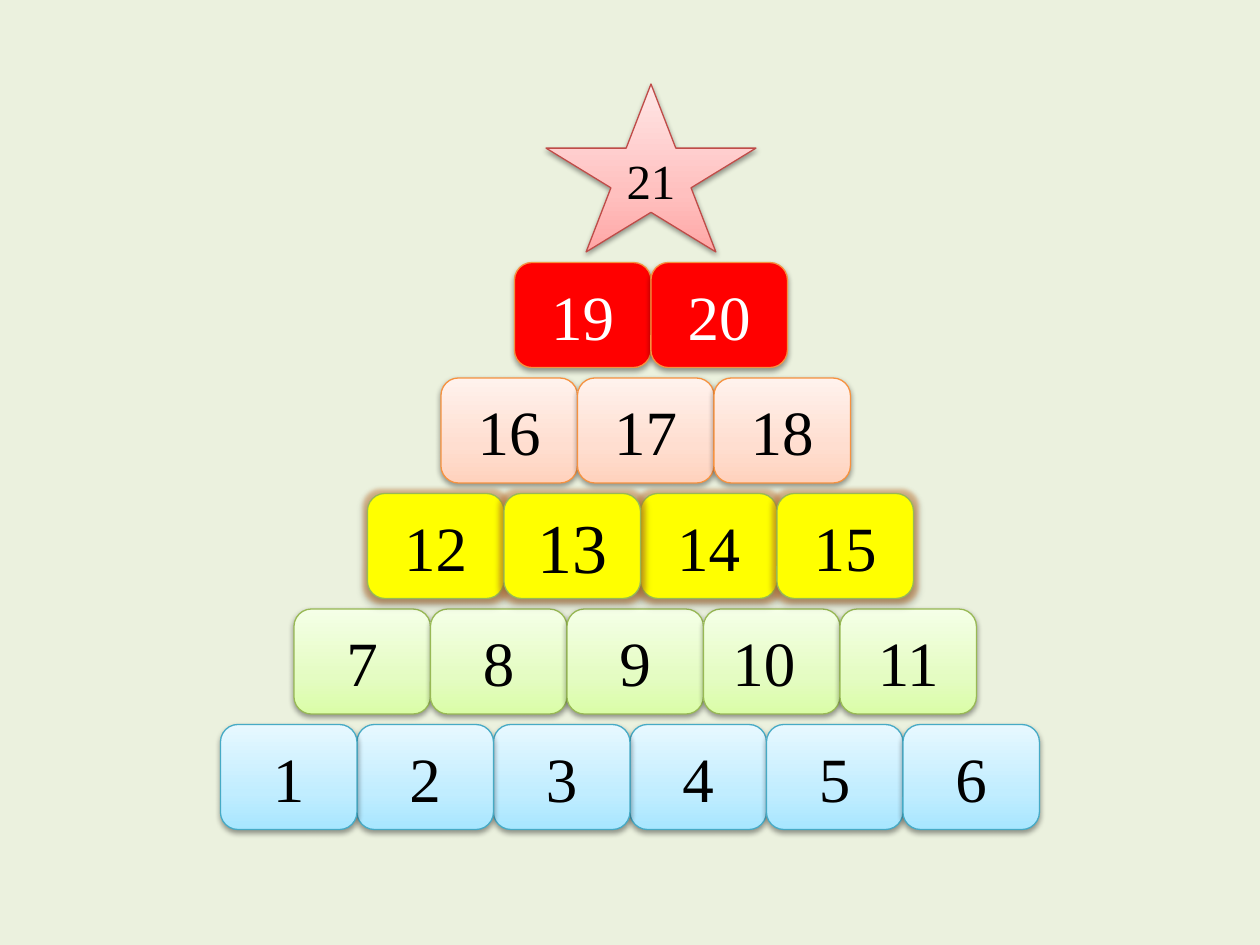
"""Build a number pyramid topped with a star."""
from copy import deepcopy
from dataclasses import dataclass

from lxml import etree
from pptx import Presentation
from pptx.dml.color import RGBColor
from pptx.enum.shapes import MSO_SHAPE
from pptx.enum.text import MSO_ANCHOR, PP_ALIGN
from pptx.oxml.ns import qn
from pptx.util import Inches, Pt

BOX, STAR = MSO_SHAPE.ROUNDED_RECTANGLE, MSO_SHAPE.STAR_5_POINT
MIDDLE, CENTER = MSO_ANCHOR.MIDDLE, PP_ALIGN.CENTER

PAPER = RGBColor(0xEB, 0xF1, 0xDE)
BLACK = RGBColor(0x00, 0x00, 0x00)
WHITE = RGBColor(0xFF, 0xFF, 0xFF)
RED = RGBColor(0xFF, 0x00, 0x00)
YELLOW = RGBColor(0xFF, 0xFF, 0x00)
GLOW = RGBColor(0xD0, 0x7A, 0x30)
TEAL = RGBColor(0x46, 0xAA, 0xC5)
OLIVE = RGBColor(0x98, 0xB9, 0x55)
ORANGE = RGBColor(0xF6, 0x92, 0x40)
BRICK = RGBColor(0xBF, 0x4C, 0x48)
BLUES = (RGBColor(0xA7, 0xE6, 0xFF), RGBColor(0xC1, 0xED, 0xFF), RGBColor(0xE7, 0xF8, 0xFF))
GREENS = (RGBColor(0xDA, 0xFD, 0xA7), RGBColor(0xE4, 0xFC, 0xC2), RGBColor(0xF5, 0xFF, 0xE7))
PEACHES = (RGBColor(0xFF, 0xD2, 0xBD), RGBColor(0xFF, 0xDE, 0xD0), RGBColor(0xFF, 0xF2, 0xED))
PINKS = (RGBColor(0xFF, 0xA6, 0xA5), RGBColor(0xFF, 0xC0, 0xBF), RGBColor(0xFF, 0xE7, 0xE7))

FONT = "Times New Roman"
STOPS = (0, 0.35, 1)
UNIT = Inches(1) // 12
WIDE, HIGH = 13, 10
LEFT, BASE = 21, 69
INDENT, RISE = 7, 11


@dataclass(frozen=True)
class Style:
    """Look of a tile; one colour is solid, three are a gradient."""
    fill: tuple[RGBColor, ...]
    line: RGBColor
    ink: RGBColor = BLACK
    glow: bool = False


@dataclass(frozen=True)
class Row:
    """Tiles of one row, from back to front."""
    labels: tuple[str, ...]
    style: Style


ROWS = (
    Row(("4", "3", "2", "1", "5", "6"), Style(BLUES, TEAL)),
    Row(("7", "8", "9", "10 ", "11"), Style(GREENS, OLIVE)),
    Row(("12", "14", "13", "15"), Style((YELLOW,), OLIVE, glow=True)),
    Row(("16", "17", "18"), Style(PEACHES, ORANGE)),
    Row(("19", "20"), Style((RED,), ORANGE, WHITE)),
)
SIZES = {"13": 40, "21": 28}


def paint(shape, hues: tuple[RGBColor, ...]) -> None:
    """Fill a shape with one colour or an upward gradient."""
    fill = shape.fill
    if len(hues) == 1:
        fill.solid()
        fill.fore_color.rgb = hues[0]
        return
    fill.gradient()
    fill.gradient_angle = 90
    stops = next(shape.element.spPr.iter(qn("a:gsLst")))
    stops.append(deepcopy(stops[-1]))
    for stop, place, hue in zip(fill.gradient_stops, STOPS, hues):
        stop.position = place
        stop.color.rgb = hue


def effect(group, tag: str, hue: RGBColor, alpha: int, **attrs: str) -> None:
    """Add a half-clear effect to an effect list."""
    item = etree.SubElement(group, qn(tag), attrs)
    tint = etree.SubElement(item, qn("a:srgbClr"), val=str(hue))
    etree.SubElement(tint, qn("a:alpha"), val=str(alpha * 1000))


def draw(slide, kind, text: str, area: tuple[int, ...], style: Style) -> None:
    """Draw one labelled tile on the grid."""
    shape = slide.shapes.add_shape(kind, *(UNIT * side for side in area))
    paint(shape, style.fill)
    shape.line.color.rgb = style.line
    shape.line.width = Pt(0.75)
    shape.shadow.inherit = False
    group = shape.element.spPr.find(qn("a:effectLst"))
    if style.glow:
        effect(group, "a:glow", GLOW, 40, rad="63500")
    effect(group, "a:outerShdw", BLACK, 38, blurRad="40000", dist="20000",
           dir="5400000", rotWithShape="0")
    frame = shape.text_frame
    frame.text = text
    frame.vertical_anchor = MIDDLE
    para = frame.paragraphs[0]
    para.alignment = CENTER
    font = para.runs[0].font
    font.name = FONT
    font.size = Pt(SIZES.get(text, 36))
    font.color.rgb = style.ink


def main() -> None:
    """Build and save the slide."""
    deck = Presentation()
    deck.slide_width, deck.slide_height = Inches(10), Inches(7.5)
    slide = deck.slides.add_slide(deck.slide_layouts[6])
    back = slide.background.fill
    back.solid()
    back.fore_color.rgb = PAPER
    for step, row in enumerate(ROWS):
        first = min(map(int, row.labels))
        for text in row.labels:
            left = LEFT + step * INDENT + (int(text) - first) * WIDE
            draw(slide, BOX, text, (left, BASE - step * RISE, WIDE, HIGH), row.style)
    draw(slide, STAR, "21", (52, 8, 20, 16), Style(PINKS, BRICK))
    deck.save("out.pptx")


if __name__ == "__main__":
    main()
